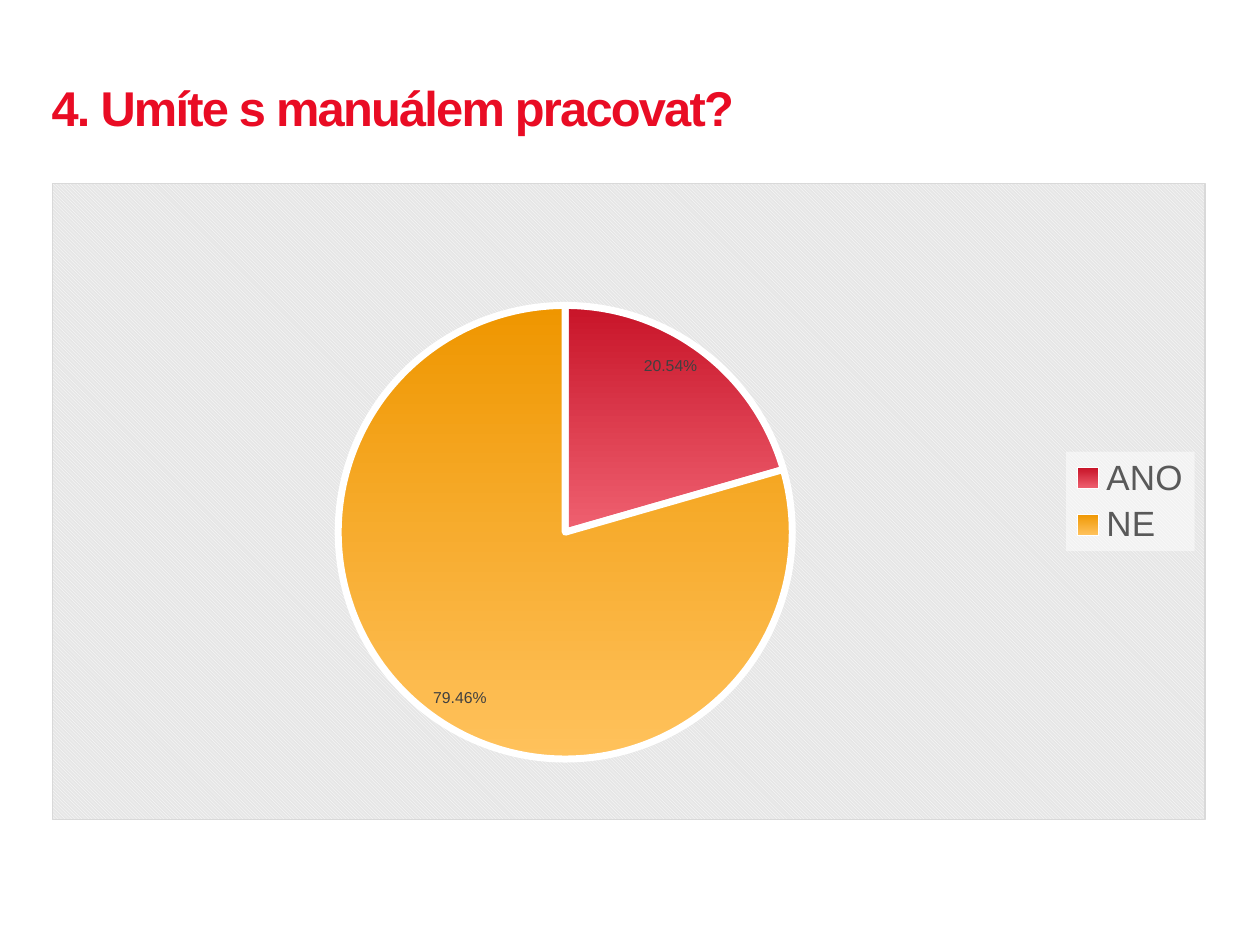
from lxml import etree
from pptx import Presentation
from pptx import util as u
from pptx.chart.data import CategoryChartData
from pptx.dml.color import RGBColor
from pptx.enum import chart as charts, text
from pptx.oxml import parse_xml
from pptx.oxml.ns import nsdecls, qn

TITLE = "4. Umíte s manuálem pracovat?"
# answer, share in percent, gradient from top to bottom
ANSWERS = [
    ("ANO", 20.54, ("C81428", "EF6171")),
    ("NE", 79.46, ("EF9600", "FFC25C")),
]
FONT = "Arial"
LEFT, WIDTH = 0.41, 9.16
PLOT = {"x": 0.082, "y": 0.192, "w": 0.726, "h": 0.713}

PANEL_STYLE = """<a:pattFill prst="dkDnDiag">
  <a:fgClr><a:srgbClr val="FFFFFF"/></a:fgClr>
  <a:bgClr><a:srgbClr val="E6E6E6"/></a:bgClr></a:pattFill>
  <a:ln w="9525"><a:solidFill><a:srgbClr val="D9D9D9"/></a:solidFill></a:ln>"""
LEGEND_STYLE = """<a:solidFill><a:srgbClr val="FFFFFF">
  <a:alpha val="50000"/></a:srgbClr></a:solidFill><a:ln><a:noFill/></a:ln>"""


def color(value):
    return RGBColor.from_string(value)


def set_font(font, size, value):
    font.name = FONT
    font.size = u.Pt(size)
    font.color.rgb = color(value)


def style_area(element, style):
    """Put shape properties before the text properties of a chart part."""
    area = parse_xml(f'<c:spPr {nsdecls("c", "a")}>{style}</c:spPr>')
    element.find(qn("c:txPr")).addprevious(area)


def place_plot(chart):
    area = chart._chartSpace.chart.plotArea
    for old in area.findall(qn("c:layout")):
        area.remove(old)
    layout = etree.Element(qn("c:layout"))
    manual = etree.SubElement(layout, qn("c:manualLayout"))
    settings = {"layoutTarget": "inner", "xMode": "edge", "yMode": "edge", **PLOT}
    for name, value in settings.items():
        etree.SubElement(manual, qn(f"c:{name}")).set("val", str(value))
    area.insert(0, layout)


def add_title(page):
    box = page.shapes.add_textbox(
        u.Inches(LEFT), u.Inches(0.32), u.Inches(WIDTH), u.Inches(1.37))
    frame = box.text_frame
    frame.word_wrap = True
    frame.vertical_anchor = text.MSO_ANCHOR.TOP
    frame.margin_left = frame.margin_right = 0
    frame.margin_top = frame.margin_bottom = 0
    para = frame.paragraphs[0]
    para.line_spacing = u.Pt(55)
    span = para.add_run()
    span.text = TITLE
    set_font(span.font, 27.9, "E90C24")
    span.font.bold = True
    span.font._element.set("spc", "-100")


def add_pie(page):
    data = CategoryChartData()
    data.categories = [name for name, _, _ in ANSWERS]
    data.add_series("Series 1", [share for _, share, _ in ANSWERS])
    chart = page.shapes.add_chart(
        charts.XL_CHART_TYPE.PIE, u.Inches(LEFT), u.Inches(1.45),
        u.Inches(WIDTH), u.Inches(5.06), data).chart
    chart.has_title = False
    set_font(chart.font, 10, "000000")
    style_area(chart._chartSpace, PANEL_STYLE)
    place_plot(chart)

    chart.has_legend = True
    legend = chart.legend
    legend.position = charts.XL_LEGEND_POSITION.RIGHT
    legend.include_in_layout = False
    set_font(legend.font, 20, "595959")
    style_area(legend._element, LEGEND_STYLE)

    plot = chart.plots[0]
    plot.vary_by_categories = True
    series = plot.series[0]
    for index, (_, _, shades) in enumerate(ANSWERS):
        look = series.points[index].format
        look.fill.gradient()
        look.fill.gradient_angle = 270
        for stop, shade in zip(look.fill.gradient_stops, shades):
            stop.color.rgb = color(shade)
        for stop, position in zip(look.fill.gradient_stops, (0, 1)):
            stop.position = position
        look.line.color.rgb = color("FFFFFF")
        look.line.width = u.Pt(4)

    labels = series.data_labels
    labels.show_percentage = True
    labels.show_value = False
    labels.number_format = "0.00%"
    labels.number_format_is_linked = False
    labels.position = charts.XL_LABEL_POSITION.INSIDE_END
    set_font(labels.font, 9, "404040")


def main():
    deck = Presentation()
    deck.slide_width, deck.slide_height = u.Inches(10), u.Inches(7.5)
    page = deck.slides.add_slide(deck.slide_layouts[6])
    add_title(page)
    add_pie(page)
    deck.save("out.pptx")


if __name__ == "__main__":
    main()
